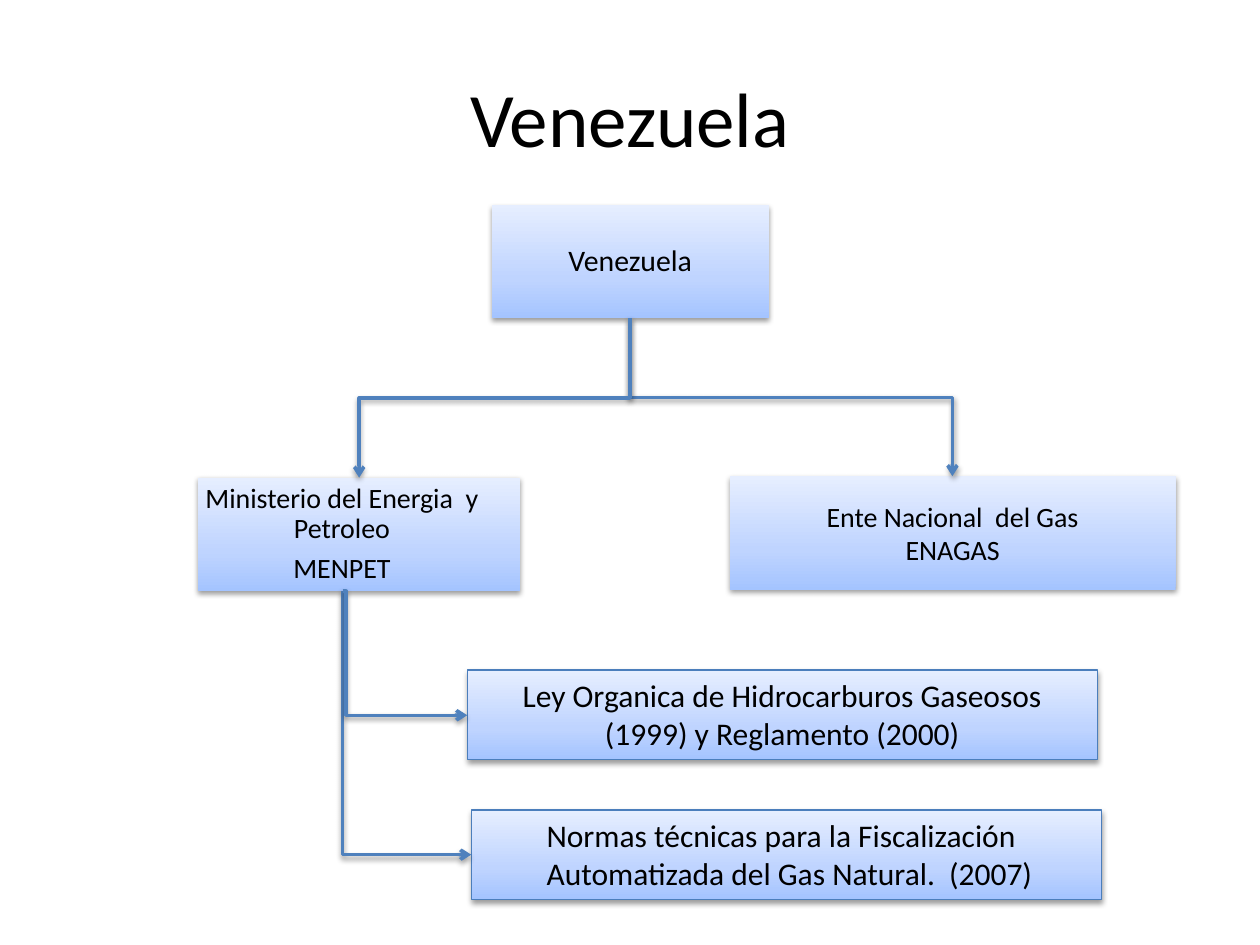
from pptx import Presentation
from pptx.dml.color import RGBColor
from pptx.enum.shapes import MSO_CONNECTOR, MSO_SHAPE
from pptx.enum.text import MSO_ANCHOR, MSO_AUTO_SIZE, PP_ALIGN
from pptx.oxml import parse_xml
from pptx.oxml.ns import nsdecls, qn
from pptx.util import Cm, Pt

COLORS = {"text": "000000", "border": "4B7EBC", "connector": "4F81BD",
          "bottom": "A4C4FF", "middle": "BFD4FF", "top": "E6EEFF"}
SHADOW = (f'<a:effectLst {nsdecls("a")}><a:outerShdw blurRad="40000" dist="20000" '
          'dir="5400000" rotWithShape="0"><a:srgbClr val="000000"><a:alpha val="38000"/>'
          '</a:srgbClr></a:outerShdw></a:effectLst>')
STOPS = "".join(f'<a:gs pos="{position}"><a:srgbClr val="{COLORS[name]}"/></a:gs>'
                for position, name in ((0, "bottom"), (35000, "middle"), (100000, "top")))
GRADIENT = (f'<a:gradFill {nsdecls("a")} rotWithShape="1"><a:gsLst>{STOPS}</a:gsLst>'
            '<a:lin ang="16200000" scaled="0"/></a:gradFill>')


def write_text(shape, lines, size, frame_format, paragraph_format):
    frame = shape.text_frame
    frame.text = "\n".join(lines)
    for name, value in {"word_wrap": True, **frame_format}.items():
        setattr(frame, name, value)
    for paragraph in frame.paragraphs:
        for name, value in {"alignment": PP_ALIGN.CENTER, **paragraph_format}.items():
            setattr(paragraph, name, value)
        for name, value in {"name": "Calibri", "size": Pt(size)}.items():
            setattr(paragraph.font, name, value)
        paragraph.font.color.rgb = RGBColor.from_string(COLORS["text"])


def add_box(slide, left, top, width, height, border):
    box = slide.shapes.add_shape(MSO_SHAPE.RECTANGLE, Cm(left), Cm(top), Cm(width), Cm(height))
    if border:
        box.line.color.rgb = RGBColor.from_string(COLORS["border"])
        box.line.width = Pt(0.75)
    else:
        box.line.fill.background()
    properties = box.element.spPr
    properties.find(qn("a:prstGeom")).addnext(parse_xml(GRADIENT))
    properties.append(parse_xml(SHADOW))
    return box


presentation = Presentation()
presentation.slide_width, presentation.slide_height = Cm(25.4), Cm(19.05)
slide = presentation.slides.add_slide(presentation.slide_layouts[6])

# Title
title = slide.shapes.add_textbox(Cm(1.27), Cm(0.76), Cm(22.86), Cm(3.18))
write_text(title, ["Venezuela"], 44, {"vertical_anchor": MSO_ANCHOR.MIDDLE}, {})

# Organisation boxes
tight = {"vertical_anchor": MSO_ANCHOR.MIDDLE,
         **{f"margin_{side}": Cm(0.03) for side in ("left", "top", "right", "bottom")}}
spaced = {"line_spacing": 0.9, "space_after": Pt(5.6)}
country = add_box(slide, 9.91, 4.13, 5.59, 2.29, False)
write_text(country, ["Venezuela"], 17, tight, spaced)
agency = add_box(slide, 14.71, 9.6, 8.99, 2.29, False)
write_text(agency, ["Ente Nacional  del Gas", "ENAGAS"], 16, tight, {})

# The ministry label is wider than its box
add_box(slide, 3.99, 9.63, 6.5, 2.29, False)
ministry_label = slide.shapes.add_textbox(Cm(3.3), Cm(9.63), Cm(7.19), Cm(2.29))
write_text(ministry_label, ["Ministerio del Energia  y Petroleo", "MENPET"], 16, tight, spaced)

# Regulation boxes
regulations = [
    (9.42, 13.51, "Ley Organica de Hidrocarburos Gaseosos (1999) y Reglamento (2000)",
     PP_ALIGN.CENTER, 0),
    (9.5, 16.33, "Normas técnicas para la Fiscalización Automatizada del Gas Natural.  (2007)",
     PP_ALIGN.LEFT, 1),
]
growing = {"vertical_anchor": MSO_ANCHOR.TOP, "auto_size": MSO_AUTO_SIZE.SHAPE_TO_FIT_TEXT}
for left, top, text, alignment, level in regulations:
    regulation = add_box(slide, left, top, 12.7, 1.8, True)
    write_text(regulation, [text], 18, growing, {"alignment": alignment, "level": level})
    regulation.text_frame.paragraphs[0]._p.get_or_add_pPr().set("marL", str(Cm(1.27 * level)))

# Elbow connectors: start, end, geometry, bend position, whether the first leg goes down
connectors = [
    ((12.7, 6.42), (19.2, 9.6), "bentConnector3", 50000, True),
    ((6.91, 11.92), (9.5, 17.23), "bentConnector2", None, True),
    ((12.7, 6.42), (7.24, 9.63), "bentConnector3", 50000, True),
    ((6.91, 11.92), (9.42, 14.42), "bentConnector3", 2700, False),
]
for (x1, y1), (x2, y2), geometry, bend, downward in connectors:
    width, height = abs(x2 - x1), abs(y2 - y1)
    if downward:
        width, height = height, width
    left, top = (x1 + x2 - width) / 2, (y1 + y2 - height) / 2
    connector = slide.shapes.add_connector(
        MSO_CONNECTOR.ELBOW, Cm(left), Cm(top), Cm(left + width), Cm(top + height))
    properties = connector.element.spPr
    if downward:
        transform = properties.find(qn("a:xfrm"))
        transform.set("rot", "16200000" if x2 > x1 else "5400000")
        if x2 > x1:
            transform.set("flipH", "1")
    preset = properties.find(qn("a:prstGeom"))
    preset.set("prst", geometry)
    if bend is not None:
        adjustments = preset.find(qn("a:avLst"))
        adjustments.append(parse_xml(f'<a:gd {nsdecls("a")} name="adj1" fmla="val {bend}"/>'))
    connector.line.color.rgb = RGBColor.from_string(COLORS["connector"])
    connector.line.width = Pt(2)
    properties.find(qn("a:ln")).append(parse_xml(f'<a:tailEnd {nsdecls("a")} type="arrow"/>'))
    properties.append(parse_xml(SHADOW))

presentation.save("out.pptx")
